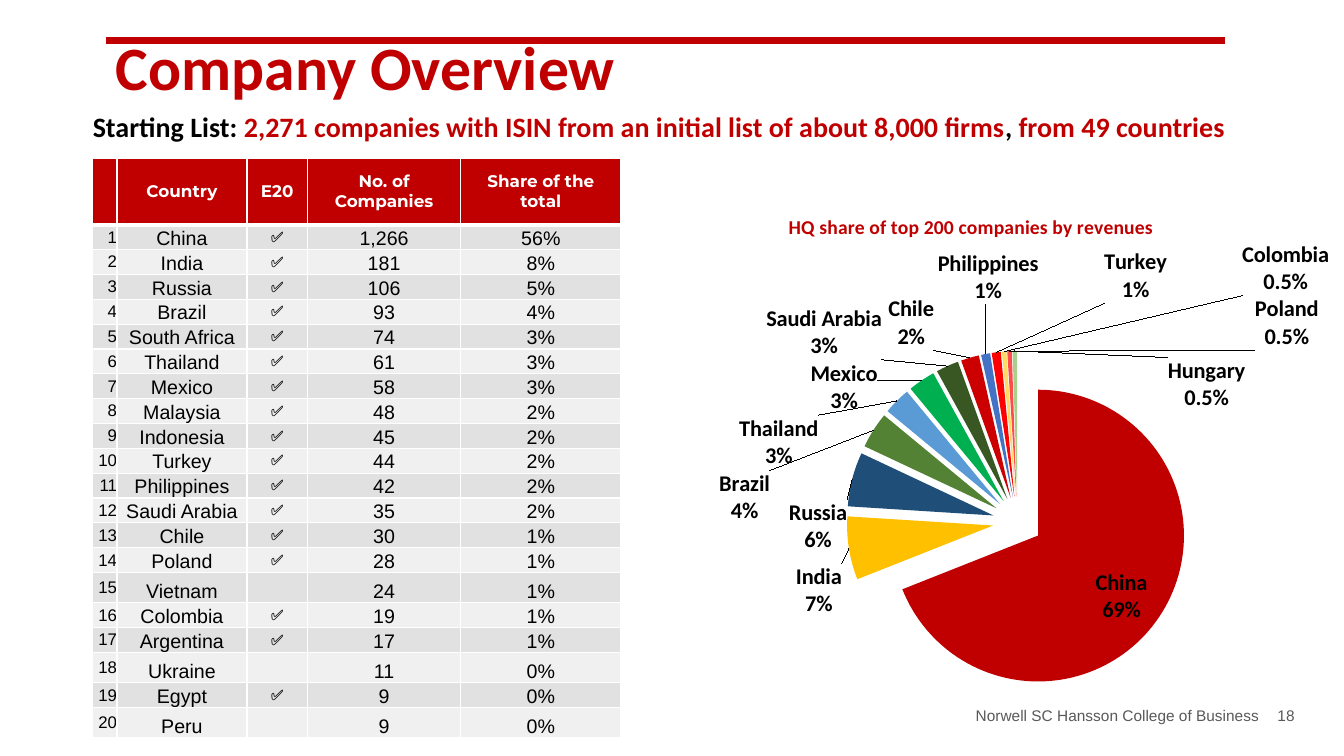
from math import cos, pi, sin

from lxml.etree import SubElement
from pptx import Presentation
from pptx.chart.data import CategoryChartData
from pptx.dml.color import RGBColor
from pptx.enum.chart import XL_CHART_TYPE
from pptx.enum.shapes import MSO_CONNECTOR
from pptx.enum.text import MSO_ANCHOR, MSO_AUTO_SIZE, PP_ALIGN
from pptx.oxml import parse_xml
from pptx.oxml.ns import nsdecls, qn
from pptx.util import Inches, Pt

RED = RGBColor(0xC0, 0x00, 0x00)
BLACK = RGBColor(0x00, 0x00, 0x00)
WHITE = RGBColor(0xFF, 0xFF, 0xFF)
GRAY = RGBColor(0x59, 0x59, 0x59)
BANDS = (RGBColor(0xE1, 0xE1, 0xE1), RGBColor(0xF0, 0xF0, 0xF0))

SUBTITLE = [
    ("Starting List: ", BLACK),
    ("2,271 companies with ISIN from an initial list of about 8,000 firms", RED),
    (", ", BLACK),
    ("from 49 countries", RED),
]
FOOTER = [("Norwell SC Hansson College of Business", 4.42, 8.07), ("18", 12.49, 0.35)]
HEADERS = ["", "Country", "E20", "No. of Companies", "Share of the total"]
COLUMN_WIDTHS = [0.24, 1.29, 0.6, 1.52, 1.59]
COUNTRIES = [
    ("China", "✅", "1,266", "56%"),
    ("India", "✅", "181", "8%"),
    ("Russia", "✅", "106", "5%"),
    ("Brazil", "✅", "93", "4%"),
    ("South Africa", "✅", "74", "3%"),
    ("Thailand", "✅", "61", "3%"),
    ("Mexico", "✅", "58", "3%"),
    ("Malaysia", "✅", "48", "2%"),
    ("Indonesia", "✅", "45", "2%"),
    ("Turkey", "✅", "44", "2%"),
    ("Philippines", "✅", "42", "2%"),
    ("Saudi Arabia", "✅", "35", "2%"),
    ("Chile", "✅", "30", "1%"),
    ("Poland", "✅", "28", "1%"),
    ("Vietnam", "", "24", "1%"),
    ("Colombia", "✅", "19", "1%"),
    ("Argentina", "✅", "17", "1%"),
    ("Ukraine", "", "11", "0%"),
    ("Egypt", "✅", "9", "0%"),
    ("Peru", "", "9", "0%"),
]
# name, value, slice colour, label width, label centre x and y in inches
SLICES = [
    ("China", 69, "C00000", 0.52, 11.13, 5.92),
    ("India", 7, "FFC000", 0.46, 8.12, 5.86),
    ("Russia", 6, "1F4E79", 0.58, 8.11, 5.23),
    ("Brazil", 4, "548235", 0.51, 7.38, 4.94),
    ("Thailand", 3, "5B9BD5", 0.79, 7.72, 4.39),
    ("Mexico", 3, "00B050", 0.67, 8.37, 3.85),
    ("Saudi Arabia", 2.5, "385723", 1.15, 8.17, 3.3),
    ("Chile", 2, "CC0000", 0.46, 9.03, 3.21),
    ("Philippines", 1, "4472C4", 1.0, 9.8, 2.75),
    ("Turkey", 1, "FF0000", 0.63, 11.26, 2.74),
    ("Colombia", 0.5, "FFD966", 0.87, 12.75, 2.66),
    ("Poland", 0.5, "FF4B4B", 0.63, 12.76, 3.21),
    ("Hungary", 0.5, "A9D18E", 0.77, 11.97, 3.82),
]
CHART_LEFT, CHART_TOP, CHART_WIDTH, CHART_HEIGHT = 6.93, 2.01, 6.3, 4.86
PLOT_LAYOUT = {"x": 0.184, "y": 0.303, "w": 0.636, "h": 0.697}
LABEL_HEIGHT = 0.54
LABEL_GAP = 0.06


def add_text(paragraph, text, size=14, font="Arial", color=BLACK, bold=False, align=None):
    """Append a formatted run to a paragraph."""
    run = paragraph.add_run()
    run.text = text
    run.font.size, run.font.name, run.font.bold = Pt(size), font, bold
    run.font.color.rgb = color
    if align is not None:
        paragraph.alignment = align


def prepare_placeholder(shape, left, top, width, height, anchor):
    """Place a placeholder and return its first paragraph."""
    shape.left, shape.top = Inches(left), Inches(top)
    shape.width, shape.height = Inches(width), Inches(height)
    frame = shape.text_frame
    frame.auto_size, frame.vertical_anchor = MSO_AUTO_SIZE.NONE, anchor
    paragraph = frame.paragraphs[0]
    paragraph.line_spacing = 0.9
    paragraph.alignment = PP_ALIGN.LEFT
    return paragraph


def add_headings(slide):
    """Fill the title and subtitle and draw the rule and the footer."""
    title = prepare_placeholder(slide.shapes.title, 1.05, 0.33, 9.86, 0.74, MSO_ANCHOR.MIDDLE)
    add_text(title, "Company Overview", size=44, font="Calibri", color=RED, bold=True)
    subtitle = prepare_placeholder(slide.placeholders[1], 0.82, 1.07, 12.5, 0.5, MSO_ANCHOR.TOP)
    properties = subtitle._p.get_or_add_pPr()
    properties.set("marL", "0")
    properties.set("indent", "0")
    subtitle.space_before = Pt(0)
    SubElement(properties, qn("a:buNone"))
    for text, color in SUBTITLE:
        add_text(subtitle, text, size=20, font="Calibri", color=color, bold=True)
    rule = slide.shapes.add_connector(
        MSO_CONNECTOR.STRAIGHT, Inches(1.05), Inches(0.4), Inches(12.15), Inches(0.4))
    rule.line.color.rgb, rule.line.width = RED, Pt(5)
    SubElement(rule._element.spPr, qn("a:effectLst"))
    for text, left, width in FOOTER:
        frame = slide.shapes.add_textbox(Inches(left), Inches(7.01), Inches(width), Inches(0.3)).text_frame
        frame.word_wrap = True
        frame.margin_left = frame.margin_right = frame.margin_top = 0
        add_text(frame.paragraphs[0], text, size=11, color=GRAY, align=PP_ALIGN.RIGHT)


def style_cell(cell, fill, bottom_width):
    """Give a cell its fill and white borders."""
    properties = cell._tc.get_or_add_tcPr()
    for side, width in (("L", 1), ("R", 1), ("T", 1), ("B", bottom_width)):
        line = SubElement(properties, qn(f"a:ln{side}"), w=str(Pt(width)))
        SubElement(SubElement(line, qn("a:solidFill")), qn("a:srgbClr"), val=str(WHITE))
    cell.fill.solid()
    cell.fill.fore_color.rgb = fill


def add_country_table(slide):
    """Build the table of companies by country."""
    rows = [HEADERS] + [(str(rank), *country) for rank, country in enumerate(COUNTRIES, 1)]
    table = slide.shapes.add_table(
        len(rows), len(HEADERS), Inches(0.92), Inches(1.57), Inches(5.24), Inches(5.59)).table
    for column, width in zip(table.columns, COLUMN_WIDTHS):
        column.width = Inches(width)
    for row_index, texts in enumerate(rows):
        header = row_index == 0
        table.rows[row_index].height = Inches(0.66 if header else 4.93 / len(COUNTRIES))
        for column_index, text in enumerate(texts):
            cell = table.cell(row_index, column_index)
            style_cell(cell, RED if header else BANDS[(row_index - 1) % 2], 3 if header else 1)
            if not header:
                cell.margin_left = cell.margin_right = cell.margin_top = cell.margin_bottom = 0
            centered = header or column_index in (0, 2)
            cell.vertical_anchor = MSO_ANCHOR.MIDDLE if centered else MSO_ANCHOR.BOTTOM
            align = PP_ALIGN.RIGHT if column_index == 0 else PP_ALIGN.CENTER
            if header:
                style = dict(size=12, font="Montserrat", color=WHITE, bold=True)
            else:
                style = dict(size={0: 12, 2: 10.5}.get(column_index, 14), bold=column_index == 2)
            add_text(cell.text_frame.paragraphs[0], text, align=align, **style)


def layout_xml(values, target=""):
    """Return a manual layout for the given fractions of the chart."""
    modes = "".join(f'<c:{key}Mode val="edge"/>' for key in "xy") if target else ""
    inner = '<c:layoutTarget val="inner"/>' if target == "inner" else ""
    sizes = "".join(f'<c:{key} val="{value:.3f}"/>' for key, value in values.items())
    return f"<c:layout {nsdecls('c')}><c:manualLayout>{inner}{modes}{sizes}</c:manualLayout></c:layout>"


def label_xml(number_format, fill):
    """Return the shared formatting of slice labels."""
    shows = zip(("LegendKey", "Val", "CatName", "SerName", "Percent", "BubbleSize"), (0, 0, 1, 0, 1, 0))
    flags = "".join(f'<c:show{name} val="{value}"/>' for name, value in shows)
    return (f'<c:numFmt formatCode="{number_format}" sourceLinked="0"/><c:spPr><a:noFill/></c:spPr>'
            f'<c:txPr><a:bodyPr/><a:p><a:pPr><a:defRPr sz="1600" b="1">{fill}<a:latin typeface="Calibri"/>'
            f'</a:defRPr></a:pPr></a:p></c:txPr><c:dLblPos val="bestFit"/>{flags}<c:separator>\n</c:separator>')


def label_offsets():
    """Return each label's shift from its place outside the slice, as chart fractions."""
    center_x = CHART_LEFT + CHART_WIDTH * (PLOT_LAYOUT["x"] + PLOT_LAYOUT["w"] / 2)
    center_y = CHART_TOP + CHART_HEIGHT * (PLOT_LAYOUT["y"] + PLOT_LAYOUT["h"] / 2)
    radius = CHART_HEIGHT * PLOT_LAYOUT["h"] / 2 + LABEL_GAP
    total, passed, offsets = sum(item[1] for item in SLICES), 0, []
    for name, value, color, width, target_x, target_y in SLICES:
        angle = 2 * pi * (passed + value / 2) / total
        passed += value
        across, down = sin(angle), -cos(angle)
        side = 0 if abs(across) < sin(pi / 36) else (1 if across > 0 else -1)
        level = 0 if abs(down) < sin(pi / 36) else (1 if down > 0 else -1)
        x = center_x + radius * across + side * width / 2
        y = center_y + radius * down + level * LABEL_HEIGHT / 2
        offsets.append({"x": (target_x - x) / CHART_WIDTH, "y": (target_y - y) / CHART_HEIGHT})
    return offsets


def add_share_chart(slide):
    """Build the exploded pie of headquarters shares."""
    data = CategoryChartData()
    data.categories = [item[0] for item in SLICES]
    data.add_series("Series 1", [item[1] for item in SLICES])
    chart = slide.shapes.add_chart(
        XL_CHART_TYPE.PIE, Inches(CHART_LEFT), Inches(CHART_TOP),
        Inches(CHART_WIDTH), Inches(CHART_HEIGHT), data).chart
    chart.has_legend = False
    chart.font.name, chart.font.size, chart.font.color.rgb = "Calibri", Pt(10), BLACK
    add_text(chart.chart_title.text_frame.paragraphs[0], "HQ share of top 200 companies by revenues",
             size=14, font="Calibri", color=RED, bold=True)
    places = ((chart.chart_title._element, {"x": 0.136, "y": 0.015}, "edge"),
              (chart._chartSpace.chart.plotArea, PLOT_LAYOUT, "inner"))
    for element, values, target in places:
        for old in element.findall(qn("c:layout")):
            element.remove(old)
        element.insert(1 if target == "edge" else 0, parse_xml(layout_xml(values, target)))
    plot = chart.plots[0]
    plot.vary_by_categories = True
    series = plot.series[0]
    for index, item in enumerate(SLICES):
        fill = series.points[index].format.fill
        fill.solid()
        fill.fore_color.rgb = RGBColor.from_string(item[2])
    element = series._element
    explosion = parse_xml(f'<c:explosion {nsdecls("c")} val="17"/>')
    element.find(qn("c:dPt")).addprevious(explosion)
    black = f'<a:solidFill><a:srgbClr val="{BLACK}"/></a:solidFill>'
    labels = "".join(
        f'<c:dLbl><c:idx val="{index}"/>{layout_xml(offset)}'
        f'{label_xml("0.0%" if SLICES[index][1] < 1 else "0%", black if index < 8 else "")}</c:dLbl>'
        for index, offset in enumerate(label_offsets()))
    element.find(qn("c:cat")).addprevious(parse_xml(
        f'<c:dLbls {nsdecls("c", "a")}>{labels}{label_xml("0%", black)}<c:showLeaderLines val="1"/></c:dLbls>'))


def main():
    """Create the company overview slide."""
    presentation = Presentation()
    presentation.slide_width, presentation.slide_height = Inches(13.33), Inches(7.5)
    slide = presentation.slides.add_slide(presentation.slide_layouts[1])
    add_headings(slide)
    add_country_table(slide)
    add_share_chart(slide)
    presentation.save("out.pptx")


if __name__ == "__main__":
    main()
